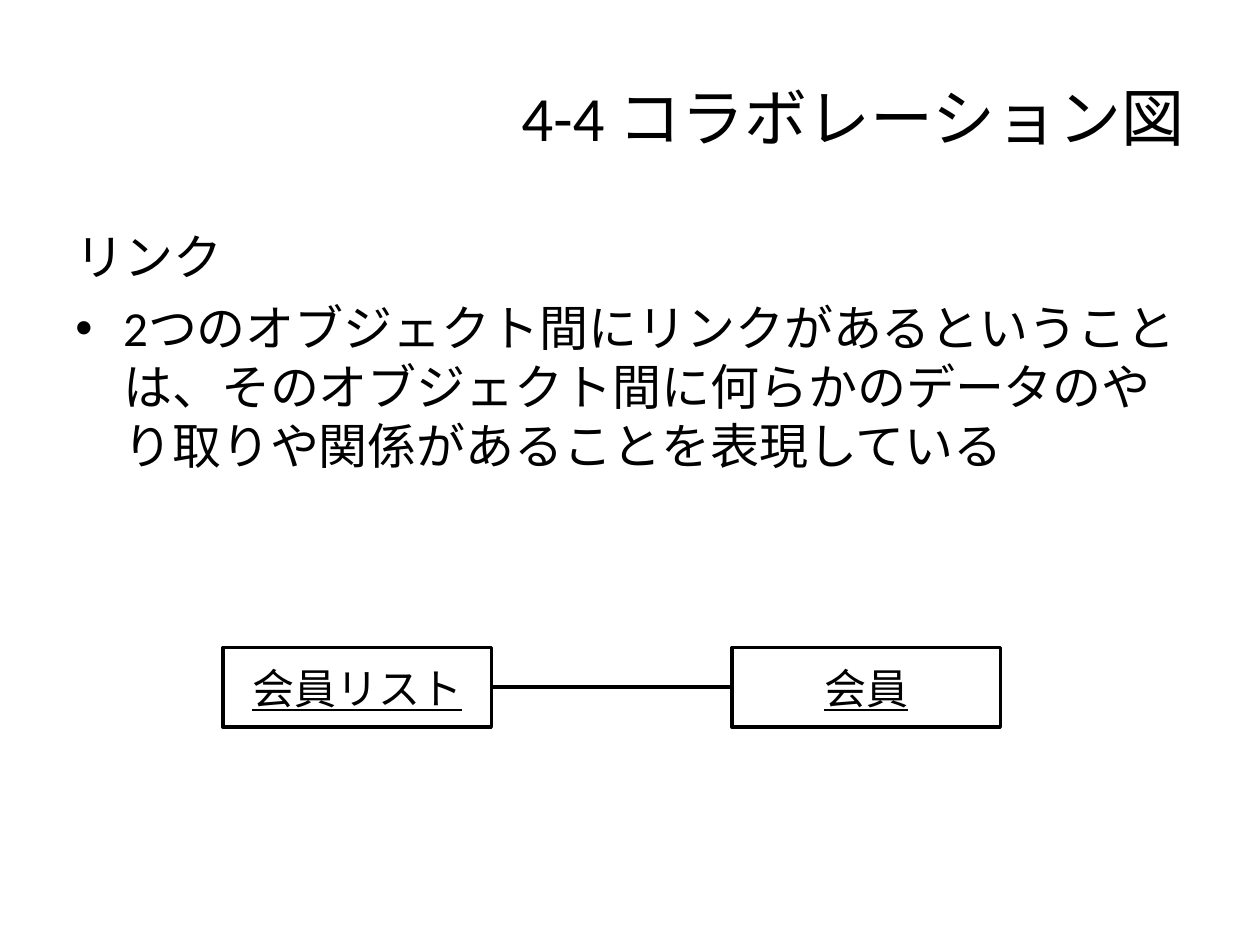
from pptx import Presentation
from pptx.dml.color import RGBColor
from pptx.enum.shapes import MSO_CONNECTOR, MSO_SHAPE
from pptx.enum.text import MSO_ANCHOR, PP_ALIGN
from pptx.oxml.ns import qn
from pptx.util import Inches, Pt
from lxml.etree import SubElement

BLACK = RGBColor(0, 0, 0)
WHITE = RGBColor(255, 255, 255)
FONT = "Calibri"

# Content
TITLE = "4-4\u3000コラボレーション図".replace("\u3000", " ")
HEADING = "リンク"
BULLET = ("2つのオブジェクト間にリンクがあるということは、"
          "そのオブジェクト間に何らかのデータのやり取りや関係があることを表現している")
OBJECTS = ["会員リスト", "会員"]

# Object boxes: left edge of the first, pitch, top and size
BOX_LEFT, BOX_PITCH, BOX_TOP = 1.77, 4.04, 5.14
BOX_W, BOX_H = 2.13, 0.63


def write(p, text, size, align=PP_ALIGN.LEFT, underline=None, before=0, bullet=False):
    p.alignment = align
    p.space_before = Pt(before)
    r = p.add_run()
    r.text = text
    r.font.name, r.font.size = FONT, Pt(size)
    r.font.color.rgb = BLACK
    r.font.underline = underline
    if bullet:
        pPr = p._p.get_or_add_pPr()
        pPr.set("marL", str(Inches(0.38)))
        pPr.set("indent", str(-Inches(0.38)))
        SubElement(pPr, qn("a:buFont")).set("typeface", "Arial")
        SubElement(pPr, qn("a:buChar")).set("char", "•")


def add_frame(s, left, top, width, height, anchor):
    sp = s.shapes.add_textbox(Inches(left), Inches(top), Inches(width), Inches(height))
    tf = sp.text_frame
    tf.word_wrap = True
    tf.vertical_anchor = anchor
    return tf


def add_object(s, name, left):
    sp = s.shapes.add_shape(MSO_SHAPE.RECTANGLE, Inches(left), Inches(BOX_TOP),
                            Inches(BOX_W), Inches(BOX_H))
    sp.shadow.inherit = False
    sp.fill.solid()
    sp.fill.fore_color.rgb = WHITE
    sp.line.color.rgb = BLACK
    sp.line.width = Pt(2)
    tf = sp.text_frame
    tf.vertical_anchor = MSO_ANCHOR.MIDDLE
    write(tf.paragraphs[0], name, 24, align=PP_ALIGN.CENTER, underline=True)
    return sp


prs = Presentation()
prs.slide_width, prs.slide_height = Inches(10), Inches(7.5)
s = prs.slides.add_slide(prs.slide_layouts[6])

# Title
tf = add_frame(s, 0.5, 0.3, 9, 1.25, MSO_ANCHOR.MIDDLE)
write(tf.paragraphs[0], TITLE, 36, align=PP_ALIGN.RIGHT)

# Explanation
tf = add_frame(s, 0.5, 1.75, 9, 4.95, MSO_ANCHOR.TOP)
write(tf.paragraphs[0], HEADING, 28, before=7)
write(tf.add_paragraph(), BULLET, 28, before=7, bullet=True)

# Two objects and the link between them
member_list, member = [add_object(s, name, BOX_LEFT + i * BOX_PITCH)
                       for i, name in enumerate(OBJECTS)]
link = s.shapes.add_connector(MSO_CONNECTOR.STRAIGHT, 0, 0, 0, 0)
link.begin_connect(member, 1)
link.end_connect(member_list, 3)
link.line.color.rgb = BLACK
link.line.width = Pt(2.25)
SubElement(link._element.spPr, qn("a:effectLst"))

prs.save("out.pptx")
